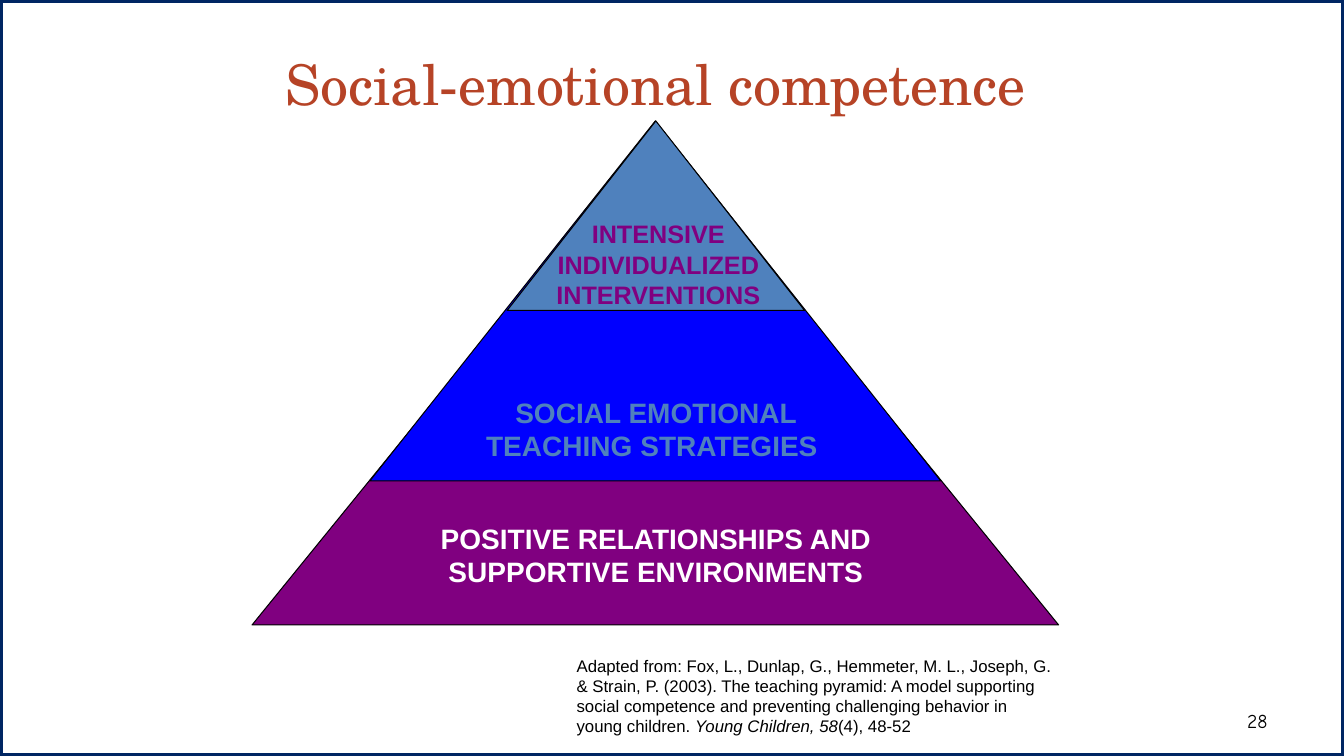
from pptx import Presentation
from pptx.dml.color import RGBColor
from pptx.enum.shapes import MSO_SHAPE
from pptx.enum.text import MSO_ANCHOR, PP_ALIGN
from pptx.util import Inches, Pt

TIERS = [
    {
        "triangle": (2.5, 1.28, 8, 4.92), "fill": "800080",
        "label": "POSITIVE RELATIONSHIPS AND SUPPORTIVE ENVIRONMENTS",
        "label_box": (3.76, 5.12, 5.49, 0.77), "size": 20, "color": "FFFFFF",
    },
    {
        "triangle": (3.67, 1.2, 5.66, 3.57), "fill": "0000FF",
        "label": "SOCIAL EMOTIONAL TEACHING STRATEGIES ",
        "label_box": (4.54, 3.87, 3.93, 0.77), "size": 20, "color": "4F81BD",
    },
    {
        "triangle": (5.03, 1.2, 2.95, 1.88), "fill": "4F81BD",
        "label": "INTENSIVE INDIVIDUALIZED INTERVENTIONS",
        "label_box": (4.96, 2.12, 3.14, 1), "size": 18, "color": "800080",
    },
]

CITATION = [
    ("Adapted from: Fox, L., Dunlap, G., Hemmeter, M. L., Joseph, G. & Strain, P. (2003). "
     "The teaching pyramid: A model supporting social competence and preventing "
     "challenging behavior in young children. ", False),
    ("Young Children, 58", True),
    ("(4), 48-52", False),
]


def rgb(color):
    return RGBColor.from_string(color)


def lengths(box):
    return [Inches(value) for value in box]


def write_text(shape, runs, font, size, color, align, anchor=MSO_ANCHOR.MIDDLE, bold=False):
    frame = shape.text_frame
    frame.word_wrap = True
    frame.vertical_anchor = anchor
    paragraph = frame.paragraphs[0]
    paragraph.alignment = align
    for text, italic in runs:
        run = paragraph.add_run()
        run.text = text
        formats = {"name": font, "size": Pt(size), "bold": bold, "italic": italic}
        for name, value in formats.items():
            setattr(run.font, name, value)
        run.font.color.rgb = rgb(color)


def add_text(slide, box, *args, **formats):
    write_text(slide.shapes.add_textbox(*lengths(box)), *args, **formats)


def add_outlined(slide, kind, box, line, width, fill=None):
    shape = slide.shapes.add_shape(kind, *lengths(box))
    shape.shadow.inherit = False
    shape.line.color.rgb = rgb(line)
    shape.line.width = Pt(width)
    if fill:
        shape.fill.solid()
        shape.fill.fore_color.rgb = rgb(fill)
    else:
        shape.fill.background()


def add_title(slide, text):
    title = slide.shapes.title
    box = lengths((1.29, 0.33, 10.42, 0.99))
    for name, value in zip(("left", "top", "width", "height"), box):
        setattr(title, name, value)
    write_text(title, [(text, False)], "TeX Gyre Schola", 40, "B64326", PP_ALIGN.CENTER)


def add_tier(slide, tier):
    add_outlined(slide, MSO_SHAPE.ISOSCELES_TRIANGLE, tier["triangle"], "000000", 0.75, tier["fill"])
    add_text(slide, tier["label_box"], [(tier["label"], False)], "Arial", tier["size"],
             tier["color"], PP_ALIGN.CENTER, anchor=MSO_ANCHOR.TOP, bold=True)


def main():
    presentation = Presentation()
    presentation.slide_width = Inches(13.33)
    presentation.slide_height = Inches(7.5)
    slide = presentation.slides.add_slide(presentation.slide_layouts[5])

    add_outlined(slide, MSO_SHAPE.RECTANGLE, (0, 0, 13.33, 7.5), "002663", 4.5)
    add_title(slide, "Social-emotional competence")
    for tier in TIERS:
        add_tier(slide, tier)
    add_text(slide, (5.62, 6.49, 4.95, 0.83), CITATION, "Arial", 12, "000000", PP_ALIGN.LEFT)
    add_text(slide, (9.56, 6.95, 3.11, 0.4), [("28", False)], "Comic Neue", 14, "000000",
             PP_ALIGN.RIGHT)
    presentation.save("out.pptx")


if __name__ == "__main__":
    main()
